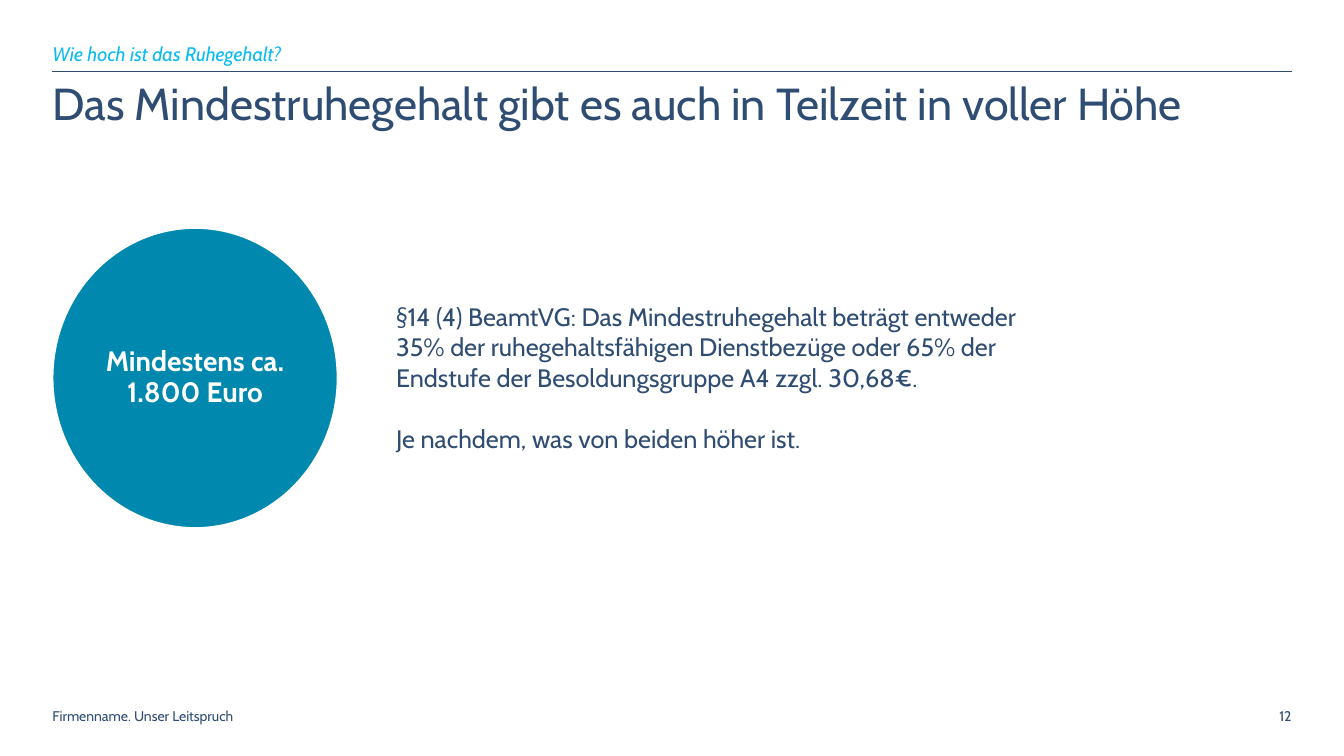
from pptx import Presentation
from pptx.dml.color import RGBColor
from pptx.enum.shapes import MSO_CONNECTOR as CONN, MSO_SHAPE as SHAPE
from pptx.enum.text import MSO_ANCHOR as ANCHOR, MSO_AUTO_SIZE as FIT, PP_ALIGN as ALIGN
from pptx.oxml.ns import qn
from pptx.util import Inches, Pt
from lxml import etree

COLORS = {"navy": "2F4D72", "cyan": "0ABBEF", "teal": "0088AE", "white": "FFFFFF"}
FONT = "Cabin"


def rgb(name):
    return RGBColor.from_string(COLORS[name])


def write(sp, *texts, size=18, color="navy", bold=False, italic=False, align=ALIGN.LEFT,
          anchor=ANCHOR.TOP, inset=(0, 0), wrap=True, spacing=1.0, gap=0):
    tf = sp.text_frame
    tf.auto_size = FIT.NONE
    tf.word_wrap = wrap
    tf.vertical_anchor = anchor
    tf.margin_left = tf.margin_right = Inches(inset[0])
    tf.margin_top = tf.margin_bottom = Inches(inset[1])
    for i, text in enumerate(texts):
        p = tf.add_paragraph() if i else tf.paragraphs[0]
        p.alignment = align
        p.line_spacing = spacing
        p.space_before = Pt(gap if i else 0)
        p.space_after = Pt(0)
        r = p.add_run()
        r.text = text
        r.font.name = FONT
        r.font.size = Pt(size)
        r.font.bold = bold
        r.font.italic = italic
        r.font.color.rgb = rgb(color)


def place(sp, x, y, w, h):
    sp.left, sp.top, sp.width, sp.height = (Inches(v) for v in (x, y, w, h))


def textbox(s, x, y, w, h, *texts, **fmt):
    sp = s.shapes.add_textbox(Inches(x), Inches(y), Inches(w), Inches(h))
    write(sp, *texts, **fmt)


def add_header(s, x, y, w, kicker, title):
    body = s.placeholders[1]
    place(body, x, y, w, 0.24)
    write(body, kicker, size=14, color="cyan", italic=True, anchor=ANCHOR.BOTTOM)
    pPr = body.text_frame.paragraphs[0]._p.get_or_add_pPr()
    pPr.set("marL", "0")
    pPr.set("indent", "0")
    etree.SubElement(pPr, qn("a:buNone"))

    rule = s.shapes.add_connector(CONN.STRAIGHT, Inches(x), Inches(y + 0.3),
                                  Inches(x + w), Inches(y + 0.3))
    rule.line.color.rgb = rgb("navy")
    rule.line.width = Pt(0.5)
    etree.SubElement(rule._element.spPr, qn("a:effectLst"))

    place(s.shapes.title, x, y + 0.4, w, 0.48)
    write(s.shapes.title, title, size=32, spacing=0.9)


def add_amount(s, x, y, w, h, text):
    circle = s.shapes.add_shape(SHAPE.OVAL, Inches(x), Inches(y), Inches(w), Inches(h))
    circle.shadow.inherit = False
    circle.fill.solid()
    circle.fill.fore_color.rgb = rgb("teal")
    circle.line.color.rgb = rgb("white")
    circle.line.width = Pt(1.5)
    write(circle, text, size=20, color="white", bold=True, align=ALIGN.CENTER,
          anchor=ANCHOR.MIDDLE, inset=(0.02, 0.02), spacing=0.9)


def add_footer(s, x, y, w, text, number):
    textbox(s, x, y, 1.87, 0.17, text, size=10, anchor=ANCHOR.MIDDLE, wrap=False)
    textbox(s, x + w - 0.5, y, 0.5, 0.17, number, size=10, align=ALIGN.RIGHT,
            anchor=ANCHOR.MIDDLE)


def main():
    prs = Presentation()
    prs.slide_width, prs.slide_height = Inches(13.33), Inches(7.5)
    s = prs.slides.add_slide(prs.slide_layouts[1])
    left, width = 0.52, 12.29
    add_header(s, left, 0.41, width, "Wie hoch ist das Ruhegehalt?",
               "Das Mindestruhegehalt gibt es auch in Teilzeit in voller Höhe")
    add_amount(s, left, 2.26, 2.83, 2.98, "Mindestens ca. 1.800 Euro")
    textbox(s, 3.83, 2.94, 6.67, 1.62,
            "§14 (4) BeamtVG: Das Mindestruhegehalt beträgt entweder 35% der "
            "ruhegehaltsfähigen Dienstbezüge oder 65% der Endstufe der "
            "Besoldungsgruppe A4 zzgl. 30,68€.",
            "Je nachdem, was von beiden höher ist.",
            inset=(0.1, 0.05), gap=22)
    add_footer(s, left, 7.02, width, "Firmenname. Unser Leitspruch", "12")
    prs.save("out.pptx")


if __name__ == "__main__":
    main()
